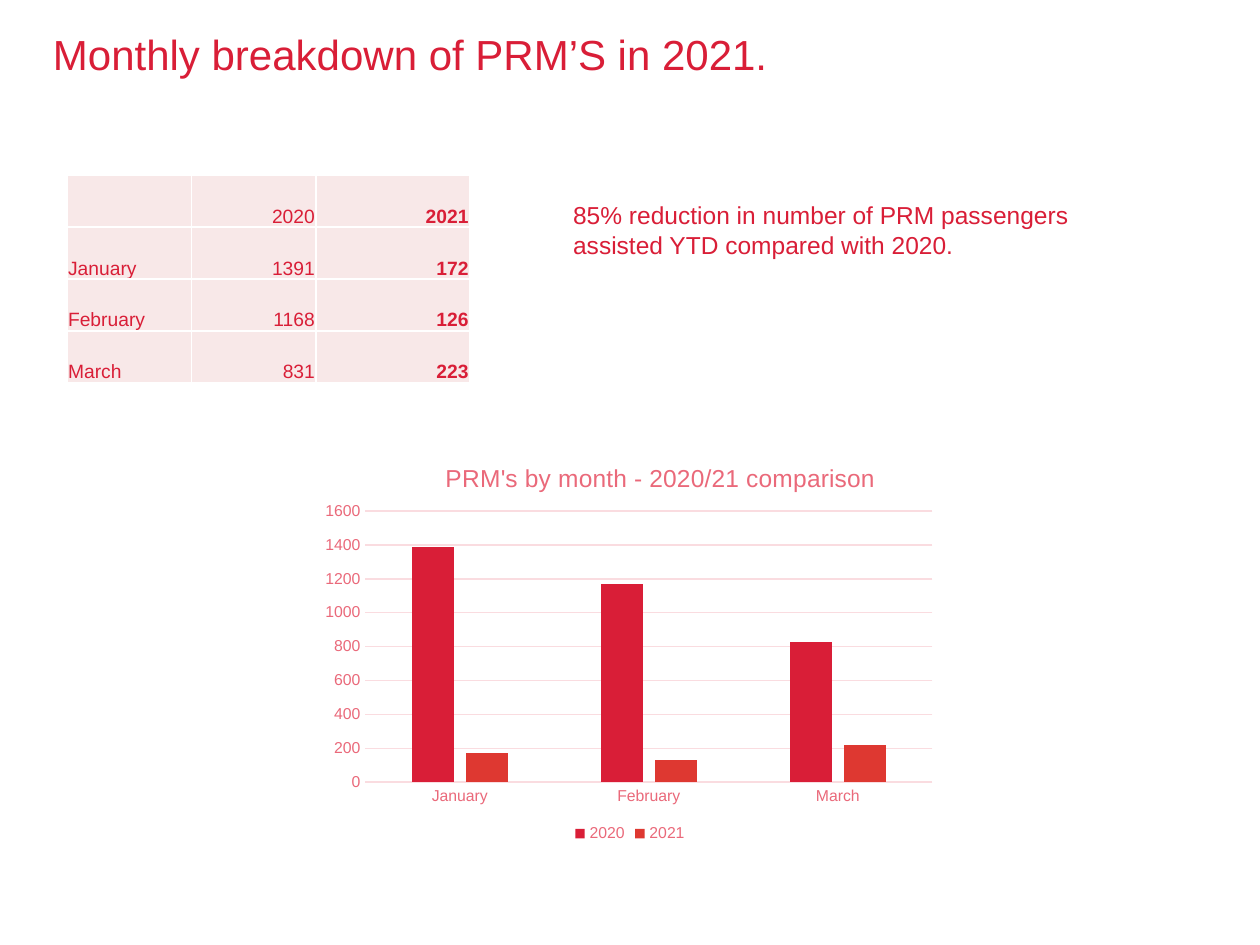
from dataclasses import dataclass

from pptx import Presentation
from pptx.chart.data import CategoryChartData
from pptx.dml.color import RGBColor
from pptx.enum.chart import XL_CHART_TYPE as ChartType, XL_LEGEND_POSITION as LegendPosition
from pptx.enum.chart import XL_TICK_MARK as TickMark
from pptx.enum.text import MSO_ANCHOR as Anchor, MSO_AUTO_SIZE as AutoSize, PP_ALIGN as Align
from pptx.oxml import parse_xml
from pptx.oxml.ns import nsdecls, qn
from pptx.util import Inches, Pt


@dataclass(frozen=True)
class Theme:
    font: str = "Arial"
    red: str = "D91E37"
    orange: str = "DE3831"
    light_red: str = "EA697A"
    grid: str = "FADCE0"
    cell: str = "F8E8E8"
    border: str = "FFFFFF"
    title_size: float = 24
    body_size: float = 14
    table_size: float = 11
    chart_size: float = 10
    axis_size: float = 9


THEME = Theme()
MONTHS = ["January", "February", "March"]
PASSENGERS = {"2020": [1391, 1168, 831], "2021": [172, 126, 223]}


def rgb(color):
    return RGBColor.from_string(color)


def format_font(font, size, color=THEME.red, bold=False):
    font.name = THEME.font
    font.size = Pt(size)
    font.bold = bold
    font.color.rgb = rgb(color)


def write_text(frame, text, size, color=THEME.red, bold=False, align=Align.LEFT):
    paragraph = frame.paragraphs[0]
    paragraph.alignment = align
    run = paragraph.add_run()
    run.text = text
    format_font(run.font, size, color, bold)


def add_title(slide, text):
    title = slide.shapes.title
    title.left, title.top = Inches(0.42), Inches(0.23)
    title.width, title.height = Inches(9.17), Inches(1.17)
    frame = title.text_frame
    frame.auto_size = AutoSize.NONE
    frame.vertical_anchor = Anchor.TOP
    frame.margin_left = frame.margin_top = frame.margin_right = frame.margin_bottom = 0
    write_text(frame, text, THEME.title_size)


def add_borders(cell):
    properties = cell._tc.get_or_add_tcPr()
    for side in ("lnL", "lnR", "lnT", "lnB"):
        properties.append(parse_xml(
            f'<a:{side} {nsdecls("a")} w="{Pt(1)}"><a:solidFill>'
            f'<a:srgbClr val="{THEME.border}"/></a:solidFill></a:{side}>'))


def add_passenger_table(slide):
    rows = [["", *PASSENGERS], *zip(MONTHS, *PASSENGERS.values())]
    widths = [0.99, 0.99, 1.22]
    table = slide.shapes.add_table(len(rows), len(widths), Inches(0.53), Inches(1.39),
                                   Inches(3.2), Inches(1.65)).table
    table.first_row = table.horz_banding = False
    for column, width in zip(table.columns, widths):
        column.width = Inches(width)
    for row_index, row in enumerate(rows):
        for column_index, value in enumerate(row):
            cell = table.cell(row_index, column_index)
            cell.margin_left = cell.margin_right = cell.margin_top = Inches(0.01)
            cell.margin_bottom = 0
            cell.vertical_anchor = Anchor.BOTTOM
            add_borders(cell)
            cell.fill.solid()
            cell.fill.fore_color.rgb = rgb(THEME.cell)
            if value != "":
                write_text(cell.text_frame, str(value), THEME.table_size,
                           bold=column_index == 2,
                           align=Align.RIGHT if column_index else Align.LEFT)


def format_line(line, color):
    line.color.rgb = rgb(color)
    line.width = Pt(0.75)


def place_in_chart(element, index, target="", **fractions):
    """Fix a chart part at fractions (x, y, w, h) of the chart's size."""
    for layout in element.findall(qn("c:layout")):
        element.remove(layout)
    modes = '<c:xMode val="edge"/><c:yMode val="edge"/>'
    values = "".join(f'<c:{name} val="{value}"/>' for name, value in fractions.items())
    element.insert(index, parse_xml(
        f'<c:layout {nsdecls("c")}><c:manualLayout>{target}{modes}{values}'
        '</c:manualLayout></c:layout>'))


def add_passenger_chart(slide):
    data = CategoryChartData()
    data.categories = MONTHS
    for year, values in PASSENGERS.items():
        data.add_series(year, [round(value, -1) for value in values])
    chart = slide.shapes.add_chart(ChartType.COLUMN_CLUSTERED, Inches(2.5), Inches(3.47),
                                   Inches(5), Inches(3.26), data).chart
    format_font(chart.font, THEME.chart_size)
    chart.has_title = True
    title = chart.chart_title
    write_text(title.text_frame, "PRM's by month - 2020/21 comparison",
               THEME.body_size, THEME.light_red, align=Align.CENTER)
    title.include_in_layout = False
    place_in_chart(title._element, 1, x=0.2, y=0.05)
    plot_area = chart._chartSpace.chart.plotArea
    place_in_chart(plot_area, 0, '<c:layoutTarget val="inner"/>',
                   x=0.08, y=0.18, w=0.9, h=0.66)

    chart.has_legend = True
    chart.legend.position = LegendPosition.BOTTOM
    chart.legend.include_in_layout = False
    format_font(chart.legend.font, THEME.axis_size, THEME.light_red)

    for axis in (chart.category_axis, chart.value_axis):
        axis.major_tick_mark = axis.minor_tick_mark = TickMark.NONE
        format_font(axis.tick_labels.font, THEME.axis_size, THEME.light_red)
    format_line(chart.category_axis.format.line, THEME.grid)
    chart.value_axis.format.line.fill.background()
    format_line(chart.value_axis.major_gridlines.format.line, THEME.grid)

    plot = chart.plots[0]
    plot.vary_by_categories = False
    plot.gap_width = 219
    plot.overlap = -27
    for series, color in zip(plot.series, (THEME.red, THEME.orange)):
        series.format.fill.solid()
        series.format.fill.fore_color.rgb = rgb(color)


def add_summary(slide, text):
    box = slide.shapes.add_textbox(Inches(4.45), Inches(1.54), Inches(4.72), Inches(0.57))
    box.text_frame.word_wrap = True
    box.text_frame.auto_size = AutoSize.SHAPE_TO_FIT_TEXT
    write_text(box.text_frame, text, THEME.body_size)


def main():
    presentation = Presentation()
    presentation.slide_width, presentation.slide_height = Inches(10), Inches(7.5)
    slide = presentation.slides.add_slide(presentation.slide_layouts[5])
    add_title(slide, "Monthly breakdown of PRM’S in 2021.")
    add_passenger_table(slide)
    add_passenger_chart(slide)
    add_summary(slide, "85% reduction in number of PRM passengers assisted YTD compared with 2020.")
    presentation.save("out.pptx")


if __name__ == "__main__":
    main()
